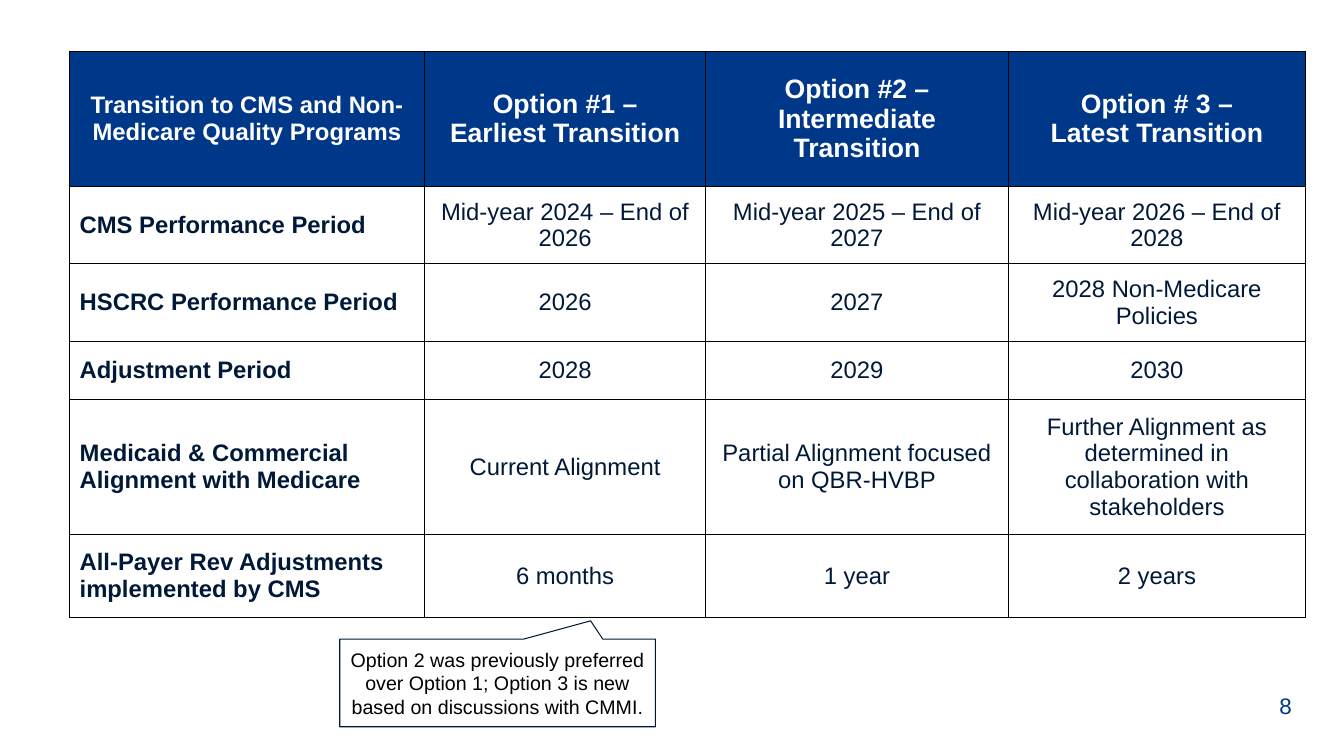
from dataclasses import dataclass

from lxml import etree
from pptx import Presentation, util as u
from pptx.dml.color import RGBColor
from pptx.enum import shapes, text
from pptx.oxml import ns


@dataclass(frozen=True)
class Theme:
    font: str = "Arial"
    blue: str = "003889"
    navy: str = "001938"
    white: str = "FFFFFF"
    black: str = "000000"
    head: int = 19
    body: int = 17
    page: int = 16
    note: int = 14
    line: float = 0.75


THEME = Theme()
CENTER, LEFT = text.PP_ALIGN.CENTER, text.PP_ALIGN.LEFT

COLS = [3.52, 2.79, 3, 2.95]
ROWS = [1.34, 0.73, 0.73, 0.58, 1.25, 0.83]
DATA = [
    ["Transition to CMS and Non-Medicare Quality Programs",
     "Option #1 –\nEarliest Transition",
     "Option #2 – Intermediate Transition",
     "Option # 3 –\nLatest Transition"],
    ["CMS Performance Period", "Mid-year 2024 – End of 2026",
     "Mid-year 2025 – End of 2027", "Mid-year 2026 – End of 2028"],
    ["HSCRC Performance Period", "2026", "2027", "2028 Non-Medicare Policies"],
    ["Adjustment Period", "2028", "2029", "2030"],
    ["Medicaid & Commercial Alignment with Medicare", "Current Alignment",
     "Partial Alignment focused on QBR-HVBP",
     "Further Alignment as determined in collaboration with stakeholders"],
    ["All-Payer Rev Adjustments implemented by CMS",
     "6 months", "1 year", "2 years"],
]
NOTE = ("Option 2 was previously preferred over Option 1; "
        "Option 3 is new based on discussions with CMMI.")


def rgb(color):
    return RGBColor.from_string(color)


def paint(item, color):
    item.fill.solid()
    item.fill.fore_color.rgb = rgb(color)


def write(frame, words, size, color, bold=False, align=LEFT):
    frame.text = words
    frame.word_wrap = True
    for para in frame.paragraphs:
        para.alignment = align
        for run in para.runs:
            font = run.font
            font.name, font.size, font.bold = THEME.font, u.Pt(size), bold
            font.color.rgb = rgb(color)


def pad(item, size):
    """Set equal margins on a cell or text frame."""
    item.margin_left = item.margin_right = u.Inches(size)
    item.margin_top = item.margin_bottom = u.Inches(size)
    item.vertical_anchor = text.MSO_ANCHOR.MIDDLE


def edge(cell):
    """Draw a thin line on all four sides; call before filling the cell."""
    props = cell._tc.get_or_add_tcPr()
    for side in ("lnL", "lnR", "lnT", "lnB"):
        line = etree.SubElement(props, ns.qn("a:" + side),
                                w=str(u.Pt(THEME.line)))
        fill = etree.SubElement(line, ns.qn("a:solidFill"))
        etree.SubElement(fill, ns.qn("a:srgbClr"), val=THEME.black)


def add_grid(slide, left, top):
    table = slide.shapes.add_table(
        len(ROWS), len(COLS), u.Inches(left), u.Inches(top),
        u.Inches(sum(COLS)), u.Inches(sum(ROWS))).table
    for col, width in zip(table.columns, COLS):
        col.width = u.Inches(width)
    for row, height in zip(table.rows, ROWS):
        row.height = u.Inches(height)
    for r, line in enumerate(DATA):
        for c, words in enumerate(line):
            cell = table.cell(r, c)
            top_row, label = r == 0, c == 0
            pad(cell, 0.1)
            edge(cell)
            paint(cell, THEME.blue if top_row else THEME.white)
            write(cell.text_frame, words,
                  THEME.head if top_row and not label else THEME.body,
                  THEME.white if top_row else THEME.navy,
                  bold=top_row or label,
                  align=LEFT if label and not top_row else CENTER)


def add_note(slide, left, top, width, height):
    note = slide.shapes.add_shape(
        shapes.MSO_SHAPE.RECTANGULAR_CALLOUT,
        *map(u.Inches, (left, top, width, height)))
    note.adjustments[0], note.adjustments[1] = 0.295, -0.708
    note.shadow.inherit = False
    paint(note, THEME.white)
    note.line.color.rgb = rgb(THEME.navy)
    note.line.width = u.Pt(THEME.line)
    pad(note.text_frame, 0.1)
    write(note.text_frame, NOTE, THEME.note, THEME.black, align=CENTER)


def add_page(slide, left, top, width, height):
    frame = slide.shapes.add_textbox(
        *map(u.Inches, (left, top, width, height))).text_frame
    frame.vertical_anchor = text.MSO_ANCHOR.MIDDLE
    write(frame, "8", THEME.page, THEME.blue)


def main():
    deck = Presentation()
    deck.slide_width, deck.slide_height = u.Inches(13.33), u.Inches(7.5)
    slide = deck.slides.add_slide(deck.slide_layouts[6])
    add_page(slide, 12.59, 6.8, 0.63, 0.4)
    add_grid(slide, 0.69, 0.51)
    add_note(slide, 3.37, 6.34, 3.13, 0.87)
    deck.save("out.pptx")


if __name__ == "__main__":
    main()
